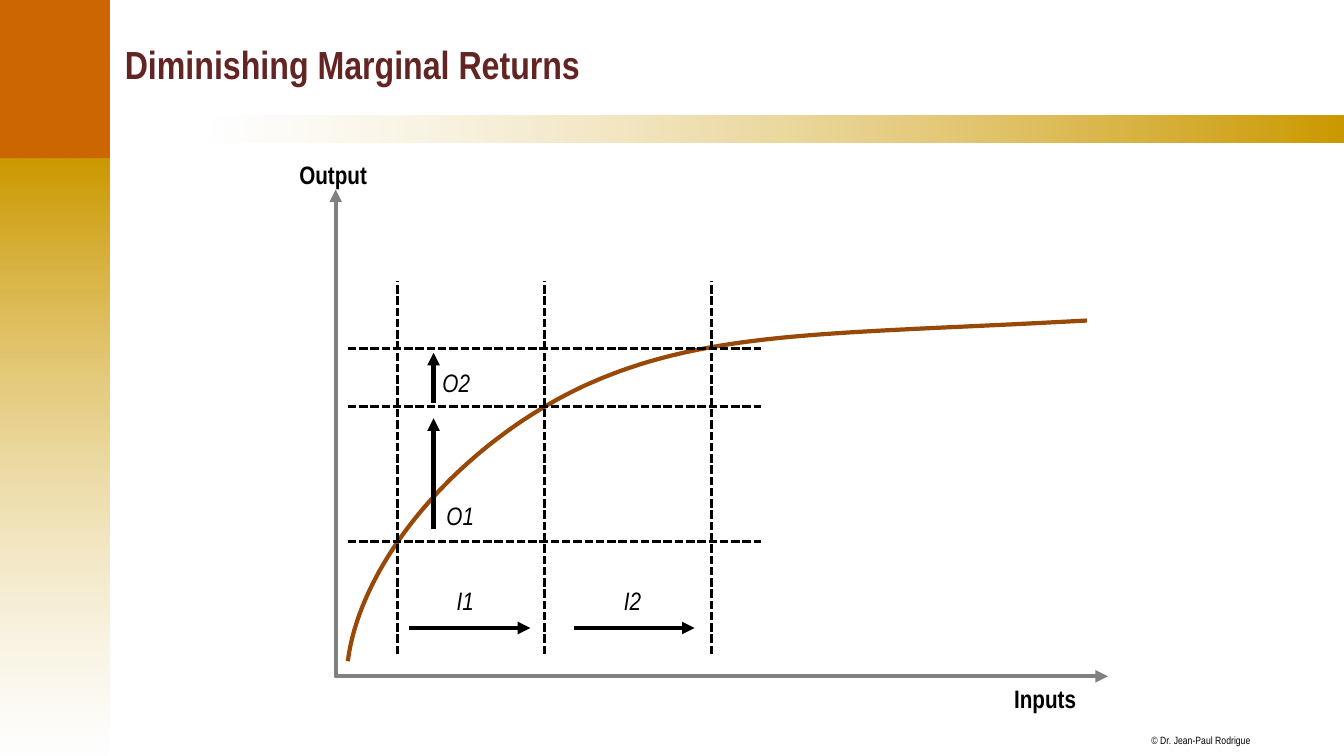
from dataclasses import dataclass

from lxml import etree
from pptx import Presentation
from pptx import util as u
from pptx.dml.color import RGBColor
from pptx.enum import dml, shapes, text
from pptx.oxml.ns import qn


@dataclass(frozen=True)
class Theme:
    font: str = "Arial Narrow"
    black: str = "000000"
    white: str = "FFFFFF"
    gold: str = "CC9900"
    orange: str = "CC6600"
    wine: str = "632523"
    gray: str = "808080"
    brown: str = "984807"
    head: float = 28
    label: float = 18
    small: float = 7.5
    thick: float = 3
    thin: float = 2


@dataclass(frozen=True)
class Label:
    words: str
    left: float
    top: float
    width: float
    bold: bool = False
    slant: bool = False


@dataclass(frozen=True)
class Arrow:
    start: tuple[float, float]
    end: tuple[float, float]


# The grid has 75 rows; its cells are square, ten to the inch
CELL = u.Inches(0.1)
COLS, ROWS = 133.33, 75
LABEL_ROWS = 4
T = Theme()

deck = Presentation()
deck.slide_width, deck.slide_height = u.Inches(13.33), u.Inches(7.5)
slide = deck.slides.add_slide(deck.slide_layouts[6])


def grid(*cells: float) -> list[int]:
    return [round(cell * CELL) for cell in cells]


def write(words: str, left: float, top: float, width: float, height: float, *,
          size: float = T.label, color: str = T.black, bold: bool = False,
          slant: bool = False, wrap: bool = False, inset: bool = True,
          anchor=text.MSO_ANCHOR.TOP) -> None:
    frame = slide.shapes.add_textbox(*grid(left, top, width, height)).text_frame
    frame.word_wrap = wrap
    frame.vertical_anchor = anchor
    if not wrap:
        frame.auto_size = text.MSO_AUTO_SIZE.SHAPE_TO_FIT_TEXT
    if not inset:
        frame.margin_left = frame.margin_right = 0
        frame.margin_top = frame.margin_bottom = 0
    run = frame.paragraphs[0].add_run()
    run.text = words
    font = run.font
    font.name, font.size, font.bold, font.italic = T.font, u.Pt(size), bold, slant
    font.color.rgb = RGBColor.from_string(color)


def block(left: float, top: float, width: float, height: float):
    shape = slide.shapes.add_shape(shapes.MSO_SHAPE.RECTANGLE,
                                   *grid(left, top, width, height))
    shape.shadow.inherit = False
    shape.line.fill.background()
    return shape


def fade(shape, colors: tuple[str, str], angle: float, clear: int) -> None:
    """Blend two colours; the stop numbered clear is half transparent."""
    shape.fill.gradient()
    shape.fill.gradient_angle = angle
    for stop, color in zip(shape.fill.gradient_stops, colors):
        stop.color.rgb = RGBColor.from_string(color)
    tone = list(shape._element.spPr.iter(qn("a:srgbClr")))[clear]
    etree.SubElement(tone, qn("a:alpha"), val="50000")


def stroke(shape, color: str, width: float, *ends: str) -> None:
    shape.line.color.rgb = RGBColor.from_string(color)
    shape.line.width = u.Pt(width)
    for end in ends:
        etree.SubElement(shape.line._get_or_add_ln(), qn(f"a:{end}"), type="triangle")


def link(start: tuple[float, float], end: tuple[float, float], width: float,
         *, dash: bool = False) -> None:
    line = slide.shapes.add_connector(shapes.MSO_CONNECTOR.STRAIGHT,
                                      *grid(*start, *end))
    if dash:
        line.line.dash_style = dml.MSO_LINE.SQUARE_DOT
    stroke(line, T.black, width, *([] if dash else ["tailEnd"]))
    etree.SubElement(line._element.spPr, qn("a:effectLst"))


def trace(points: list[tuple[float, float]], color: str, *ends: str) -> None:
    first, *rest = [tuple(grid(*point)) for point in points]
    pen = slide.shapes.build_freeform(*first)
    pen.add_line_segments(rest, close=False)
    shape = pen.convert_to_shape()
    shape.shadow.inherit = False
    shape.fill.background()
    stroke(shape, color, T.thick, *ends)


def bend(knots: list[tuple[float, float]], steps: int = 40) -> list[tuple[float, float]]:
    """Points along a chain of cubic curves."""
    points = [knots[0]]
    for i in range(0, len(knots) - 1, 3):
        for t in (step / steps for step in range(1, steps + 1)):
            shares = ((1 - t) ** 3, 3 * t * (1 - t) ** 2, 3 * t * t * (1 - t), t ** 3)
            points.append(tuple(sum(w * knot[axis] for w, knot in zip(shares, knots[i:i + 4]))
                                for axis in (0, 1)))
    return points


# Side panel, title band and credit
SIDE, SPLIT, BAND = 11.1, 15.7, 20.9
fade(block(-0.2, SPLIT, SIDE, ROWS - SPLIT), (T.gold, T.white), 270, 1)
fade(block(BAND, 11.5, COLS - BAND, 2.6), (T.white, T.gold), 0, 0)
write("© Dr. Jean-Paul Rodrigue", 114.2, 72.8, 9.9, 1.3, size=T.small, inset=False)
panel = block(-0.2, -0.1, SIDE, SPLIT + 0.1)
panel.fill.solid()
panel.fill.fore_color.rgb = RGBColor.from_string(T.orange)
write("Diminishing Marginal Returns", 11.4, 1.1, 119.7, 10.4, size=T.head,
      color=T.wine, bold=True, wrap=True, anchor=text.MSO_ANCHOR.MIDDLE)

# Axes and output curve
trace([(33.3, 18.8), (33.3, 67.1), (109.9, 67.1)], T.gray, "headEnd", "tailEnd")
trace(bend([(34.5, 65.6), (35.8, 55.5), (45.7, 44), (57.9, 38.3),
            (70.1, 32.7), (82.3, 33.2), (107.8, 31.8)]), T.brown)

# Dashed guides
for col in (39.4, 54, 70.6):
    link((col, 64.9), (col, 27.9), T.thin, dash=True)
for row in (53.7, 40.3, 34.6):
    link((34.5, row), (75.5, row), T.thin, dash=True)

# Steps of input and output
for arrow in (Arrow((40.6, 62.3), (52.6, 62.3)), Arrow((56.9, 62.3), (68.9, 62.3)),
              Arrow((43, 52.5), (43, 41.5)), Arrow((43, 40), (43, 35))):
    link(arrow.start, arrow.end, T.thick)

# Labels
for label in (Label("Inputs", 99.6, 67.3, 8.2, bold=True),
              Label("Output", 28.7, 15.3, 8.8, bold=True),
              Label("I1", 44.3, 57.6, 3.8, slant=True),
              Label("I2", 60.9, 57.6, 3.8, slant=True),
              Label("O2", 42.9, 35.9, 4.8, slant=True),
              Label("O1", 43.3, 49.1, 4.8, slant=True)):
    write(label.words, label.left, label.top, label.width, LABEL_ROWS,
          bold=label.bold, slant=label.slant)

deck.save("out.pptx")
